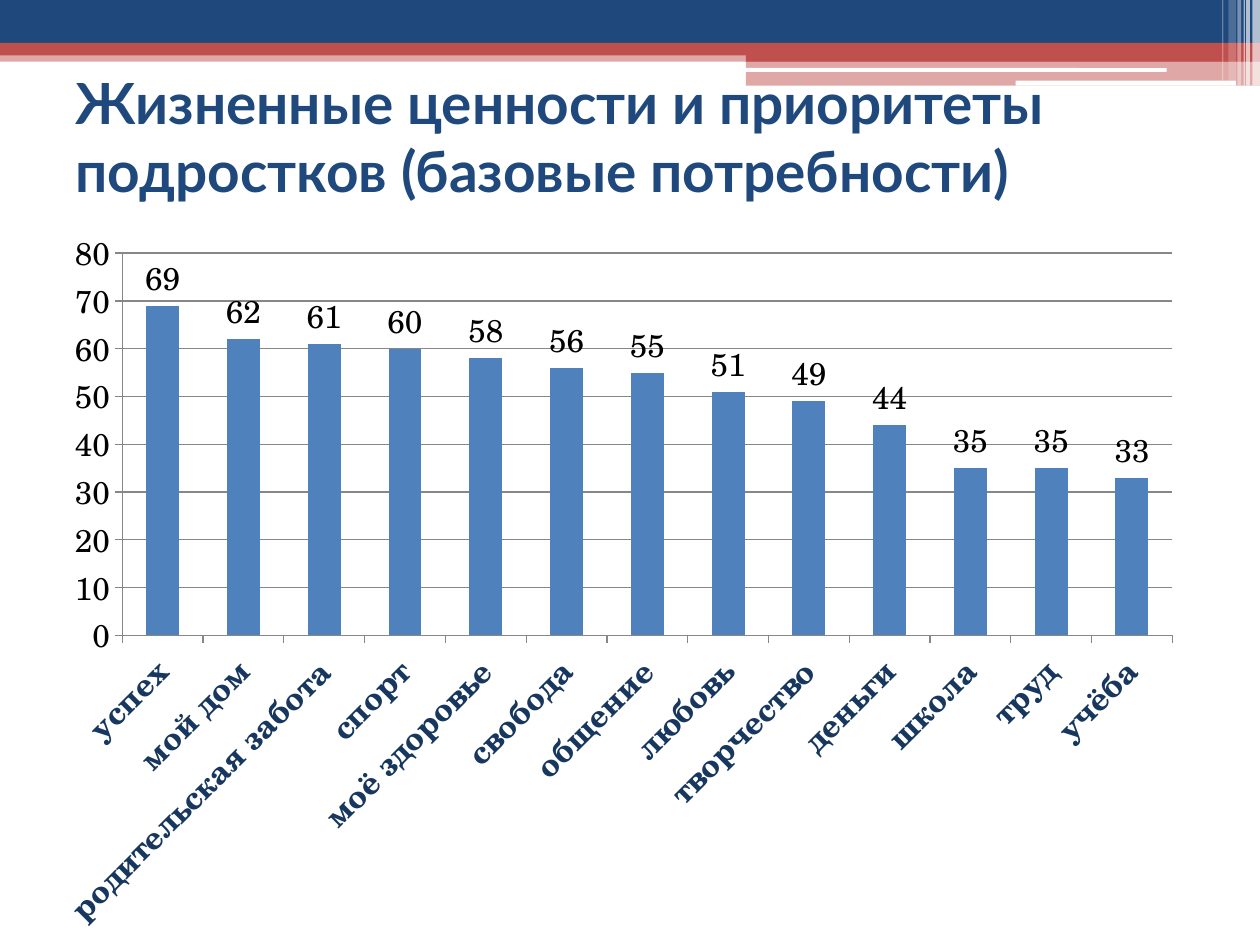
from lxml import etree
from pptx import Presentation
from pptx.chart.data import CategoryChartData
from pptx.dml.color import RGBColor
from pptx.enum.chart import XL_CHART_TYPE, XL_LABEL_POSITION, XL_TICK_MARK
from pptx.enum.shapes import MSO_SHAPE
from pptx.enum.text import MSO_ANCHOR, MSO_AUTO_SIZE, PP_ALIGN
from pptx.oxml import parse_xml
from pptx.oxml.ns import nsdecls, qn
from pptx.util import Inches, Pt

HUES = {
    "navy": "1F497D", "red": "C0504D", "white": "FFFFFF", "bar": "4F81BD",
    "black": "000000", "label": "17375E", "grid": "878787",
}
BANDS = [
    (0, 0.4, 10, 0.09, "red", 50),
    (0, 0, 10, 0.34, "navy", 100),
    (0, 0.34, 10, 0.1, "red", 100),
    (5.92, 0.39, 4.08, 0.1, "red", 100),
    (5.92, 0.48, 4.08, 0.2, "red", 50),
]
PILLS = [(5.91, 0.54, 3.35, 0.03), (8.06, 0.64, 1.75, 0.04)]
STRIPES = [
    (9.94, 0.06, 0.68, 65), (9.89, 0.03, 0.68, 65), (9.87, 0.01, 0.68, 60),
    (9.82, 0.03, 0.68, 40), (9.75, 0.06, 0.64, 20), (9.7, 0.01, 0.64, 30),
]
VALUES = {
    "успех": 69, "мой дом": 62, "родительская забота": 61, "спорт": 60,
    "моё здоровье": 58, "свобода": 56, "общение": 55, "любовь": 51,
    "творчество": 49, "деньги": 44, "школа": 35, "труд": 35, "учёба": 33,
}


def hue(name):
    return RGBColor.from_string(HUES[name])


def style(font, face, size, color, bold=False):
    font.name = face
    font.size = Pt(size)
    font.bold = bold
    font.color.rgb = hue(color)


def write(frame, text, face="Lato", size=18, color="black", bold=False,
          align=PP_ALIGN.LEFT):
    para = frame.paragraphs[0]
    para.alignment = align
    run = para.add_run()
    run.text = text
    style(run.font, face, size, color, bold)


def block(slide, box, color, alpha=100, kind=MSO_SHAPE.RECTANGLE):
    shape = slide.shapes.add_shape(kind, *map(Inches, box))
    shape.shadow.inherit = False
    shape.fill.solid()
    shape.fill.fore_color.rgb = hue(color)
    shape.line.fill.background()
    if alpha < 100:
        tint = shape.fill._xPr.find(".//" + qn("a:srgbClr"))
        etree.SubElement(tint, qn("a:alpha"), val=str(alpha * 1000))


def header(slide, left, top):
    for x, y, wide, high, color, alpha in BANDS:
        block(slide, (left + x, top + y, wide, high), color, alpha)
    for x, y, wide, high in PILLS:
        block(slide, (left + x, top + y, wide, high), "white",
              kind=MSO_SHAPE.ROUNDED_RECTANGLE)
    for x, wide, high, alpha in STRIPES:
        block(slide, (left + x, top, wide, high), "white", alpha)


def pin(chart, x, y, wide, high):
    plot = chart._chartSpace.chart.plotArea
    for old in plot.findall(qn("c:layout")):
        plot.remove(old)
    plot.insert(0, parse_xml(
        f'<c:layout {nsdecls("c")}><c:manualLayout>'
        '<c:layoutTarget val="inner"/><c:xMode val="edge"/><c:yMode val="edge"/>'
        f'<c:x val="{x}"/><c:y val="{y}"/><c:w val="{wide}"/><c:h val="{high}"/>'
        '</c:manualLayout></c:layout>'))


def graph(slide, box):
    data = CategoryChartData()
    data.categories = list(VALUES)
    data.add_series("Series 1", list(VALUES.values()))
    chart = slide.shapes.add_chart(
        XL_CHART_TYPE.COLUMN_CLUSTERED, *map(Inches, box), data).chart
    chart.has_legend = False
    chart.has_title = False
    face = "TeX Gyre Schola"
    style(chart.font, face, 18, "black")
    pin(chart, 0.075, 0.05, 0.905, 0.525)

    plot = chart.plots[0]
    plot.gap_width = 145
    plot.vary_by_categories = False
    fill = plot.series[0].format.fill
    fill.solid()
    fill.fore_color.rgb = hue("bar")
    plot.has_data_labels = True
    labels = plot.data_labels
    labels.show_value = True
    labels.position = XL_LABEL_POSITION.OUTSIDE_END
    style(labels.font, face, 18, "black")

    cats, vals = chart.category_axis, chart.value_axis
    for axis in (cats, vals):
        axis.major_tick_mark = XL_TICK_MARK.OUTSIDE
        axis.format.line.color.rgb = hue("grid")
        axis.format.line.width = Pt(0.75)
    style(cats.tick_labels.font, face, 18, "label", True)
    turn = cats._element.find(qn("c:txPr")).find(qn("a:bodyPr"))
    turn.set("rot", "-2700000")
    turn.set("vert", "horz")
    style(vals.tick_labels.font, face, 18, "black")
    vals.minimum_scale, vals.maximum_scale, vals.major_unit = 0, 80, 10
    vals.has_major_gridlines = True
    line = vals.major_gridlines.format.line
    line.color.rgb = hue("grid")
    line.width = Pt(0.75)


def heading(slide, box):
    title = slide.shapes.title
    title.left, title.top, title.width, title.height = map(Inches, box)
    frame = title.text_frame
    frame.word_wrap = True
    frame.auto_size = MSO_AUTO_SIZE.NONE
    frame.vertical_anchor = MSO_ANCHOR.MIDDLE
    frame.margin_bottom = Inches(0.6)
    write(frame, "Жизненные ценности и приоритеты подростков (базовые потребности)",
          size=32.4, color="navy", bold=True)
    slide.shapes[-1].element.addnext(title.element)


def main():
    deck = Presentation()
    deck.slide_width, deck.slide_height = Inches(10), Inches(7.5)
    slide = deck.slides.add_slide(deck.slide_layouts[5])
    header(slide, 0, 0)
    graph(slide, (0.28, 1.72, 9.21, 5.78))
    heading(slide, (0.5, 0.76, 9, 1.18))
    deck.save("out.pptx")


if __name__ == "__main__":
    main()
